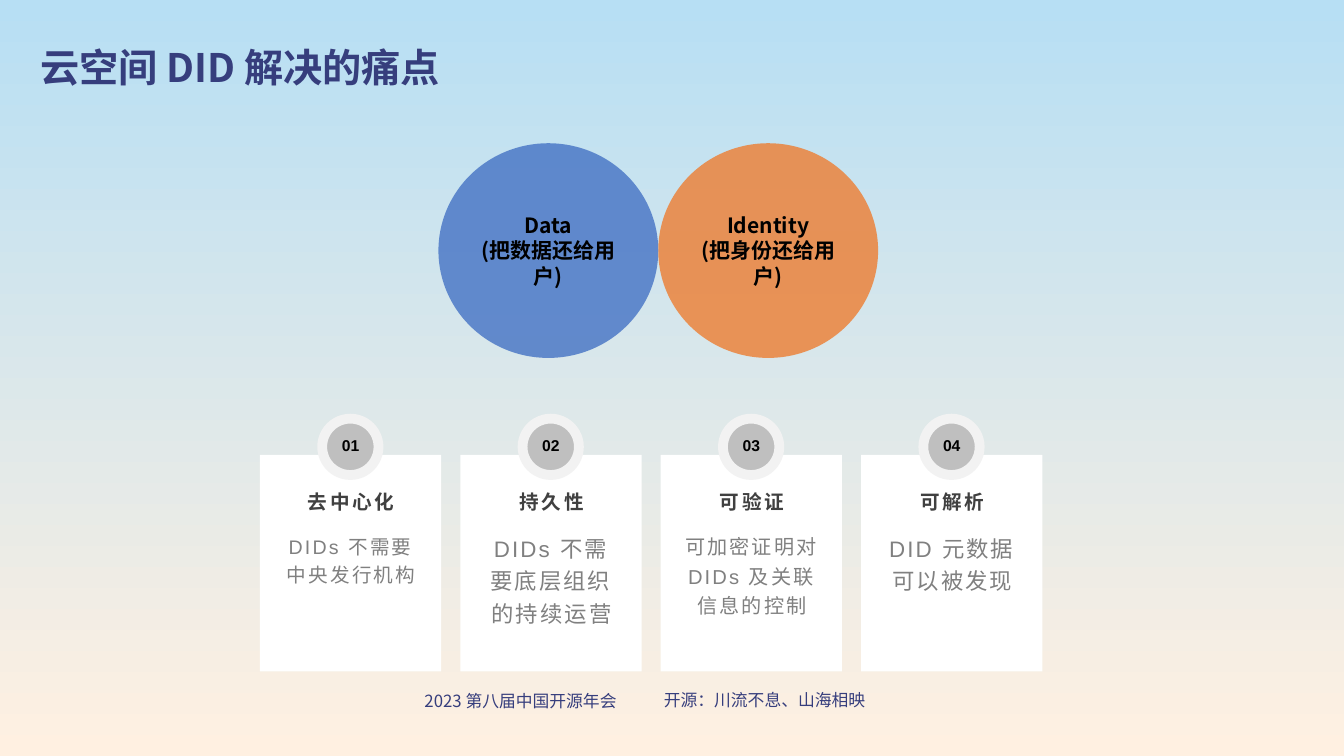
"""Build the slide on the pain points that DID solves."""
from dataclasses import dataclass

from lxml import etree
from pptx import Presentation
from pptx.dml.color import RGBColor
from pptx.enum.shapes import MSO_SHAPE
from pptx.enum.text import MSO_ANCHOR, MSO_AUTO_SIZE, PP_ALIGN
from pptx.oxml.ns import qn
from pptx.shapes.autoshape import Shape
from pptx.slide import Slide
from pptx.util import Cm, Pt

OVAL = MSO_SHAPE.OVAL
RECT = MSO_SHAPE.RECTANGLE
LEFT = PP_ALIGN.LEFT
CENTER = PP_ALIGN.CENTER
TOP = MSO_ANCHOR.TOP
MIDDLE = MSO_ANCHOR.MIDDLE
FIXED = MSO_AUTO_SIZE.NONE

SKY = RGBColor(0xB7, 0xDF, 0xF4)
SAND = RGBColor(0xFF, 0xF0, 0xE1)
NAVY = RGBColor(0x36, 0x3E, 0x7D)
BLUE = RGBColor(0x44, 0x72, 0xC4)
ORANGE = RGBColor(0xED, 0x7D, 0x31)
WHITE = RGBColor(0xFF, 0xFF, 0xFF)
SILVER = RGBColor(0xBF, 0xBF, 0xBF)
PALE = RGBColor(0xF2, 0xF2, 0xF2)
BLACK = RGBColor(0x00, 0x00, 0x00)
DARK = RGBColor(0x40, 0x40, 0x40)
GRAY = RGBColor(0x80, 0x80, 0x80)

NOTO = "Noto Sans CJK SC"
ARIAL = "Arial"


@dataclass(frozen=True)
class Box:
    """A place on the slide, in centimetres."""
    left: float
    top: float
    width: float
    height: float


@dataclass(frozen=True)
class Style:
    """The look of a text."""
    font: str
    size: float
    color: RGBColor
    bold: bool = False
    track: int = 0
    lines: float = 1.0
    after: float = 0
    align: PP_ALIGN = CENTER


@dataclass(frozen=True)
class Circle:
    """One of the two large circles."""
    text: str
    color: RGBColor


@dataclass(frozen=True)
class Card:
    """A numbered card."""
    head: str
    body: str
    size: float


@dataclass(frozen=True)
class Note:
    """A text at the foot of the slide."""
    text: str
    box: Box


TITLE = Style(NOTO, 28, NAVY, bold=True, align=LEFT)
FOOT = Style(NOTO, 12, NAVY)
LABEL = Style(NOTO, 15, BLACK, bold=True)
NUMBER = Style(ARIAL, 11.2, BLACK, bold=True)
HEAD = Style(ARIAL, 14, DARK, bold=True, track=200, lines=1.2)

CIRCLES = (
    Circle("Data\n(把数据还给用户)", BLUE),
    Circle("Identity\n(把身份还给用户)", ORANGE),
)
CARDS = (
    Card("去中心化", "DIDs 不需要中央发行机构", 14),
    Card("持久性", "DIDs 不需要底层组织的持续运营", 16),
    Card("可验证", "可加密证明对 DIDs 及关联信息的控制", 14.4),
    Card("可解析", "DID 元数据可以被发现", 16),
)
NOTES = (
    Note("2023 第八届中国开源年会", Box(9.63, 17.27, 6.98, 0.76)),
    Note("开源：川流不息、山海相映", Box(16.21, 17.25, 6.12, 0.76)),
)
ROUND = Box(11.05, 3.61, 5.54, 5.41)
START = 6.55
PITCH = 5.05


def write(shape: Shape, text: str, style: Style, anchor: MSO_ANCHOR = TOP) -> None:
    """Put styled text into a shape."""
    frame = shape.text_frame
    frame.text = text
    frame.word_wrap = True
    frame.auto_size = FIXED
    frame.vertical_anchor = anchor
    for para in frame.paragraphs:
        para.alignment = style.align
        para.line_spacing = style.lines
        para.space_before = Pt(0)
        para.space_after = Pt(style.after)
        for run in para.runs:
            run.font.name = style.font
            run.font.size = Pt(style.size)
            run.font.bold = style.bold
            run.font.color.rgb = style.color
            props = run.font._element
            props.set("spc", str(style.track))
            etree.SubElement(props, qn("a:ea")).set("typeface", NOTO)


def place(shape: Shape, box: Box) -> None:
    """Move and size a shape."""
    shape.left, shape.top = Cm(box.left), Cm(box.top)
    shape.width, shape.height = Cm(box.width), Cm(box.height)


def label(slide: Slide, box: Box, text: str, style: Style) -> None:
    """Add a text box."""
    area = slide.shapes.add_textbox(0, 0, 0, 0)
    place(area, box)
    write(area, text, style)


def draw(slide: Slide, kind: MSO_SHAPE, box: Box, color: RGBColor) -> Shape:
    """Add a plain filled shape."""
    shape = slide.shapes.add_shape(kind, 0, 0, 0, 0)
    place(shape, box)
    shape.shadow.inherit = False
    shape.fill.solid()
    shape.fill.fore_color.rgb = color
    shape.line.fill.background()
    return shape


def add_circle(slide: Slide, circle: Circle, index: int) -> None:
    """Add a large see-through circle with its label."""
    left = ROUND.left + index * ROUND.width
    box = Box(left, ROUND.top, ROUND.width, ROUND.height)
    shape = draw(slide, OVAL, box, circle.color)
    tint = shape._element.spPr.find(qn("a:solidFill")).find(qn("a:srgbClr"))
    etree.SubElement(tint, qn("a:alpha")).set("val", "80000")
    write(shape, circle.text, LABEL, MIDDLE)


def add_card(slide: Slide, card: Card, index: int) -> None:
    """Add a card with its number, heading and body."""
    left = START + index * PITCH
    draw(slide, RECT, Box(left, 11.46, 4.57, 5.46), WHITE)
    disc = draw(slide, OVAL, Box(left + 1.57, 10.55, 1.42, 1.42), SILVER)
    disc.line.color.rgb = PALE
    disc.line.width = Pt(7)
    label(slide, Box(left + 1.74, 10.87, 1.09, 0.79), f"{index + 1:02}", NUMBER)
    label(slide, Box(left + 0.33, 12.09, 3.94, 0.99), card.head, HEAD)
    body = Style(ARIAL, card.size, GRAY, track=150, lines=1.2, after=10)
    label(slide, Box(left + 0.33, 13.23, 3.94, 3.33), card.body, body)


def main() -> None:
    """Build and save the deck."""
    deck = Presentation()
    deck.slide_width, deck.slide_height = Cm(33.87), Cm(19.05)
    slide = deck.slides.add_slide(deck.slide_layouts[5])
    fill = slide.background.fill
    fill.gradient()
    fill.gradient_angle = 270
    for stop, color in zip(fill.gradient_stops, (SKY, SAND)):
        stop.color.rgb = color
    title = slide.shapes.title
    place(title, Box(0.76, 0.97, 31.39, 2.64))
    write(title, "云空间 DID 解决的痛点", TITLE)
    for note in NOTES:
        label(slide, note.box, note.text, FOOT)
    for index, circle in enumerate(CIRCLES):
        add_circle(slide, circle, index)
    for index, card in enumerate(CARDS):
        add_card(slide, card, index)
    deck.save("out.pptx")


if __name__ == "__main__":
    main()
